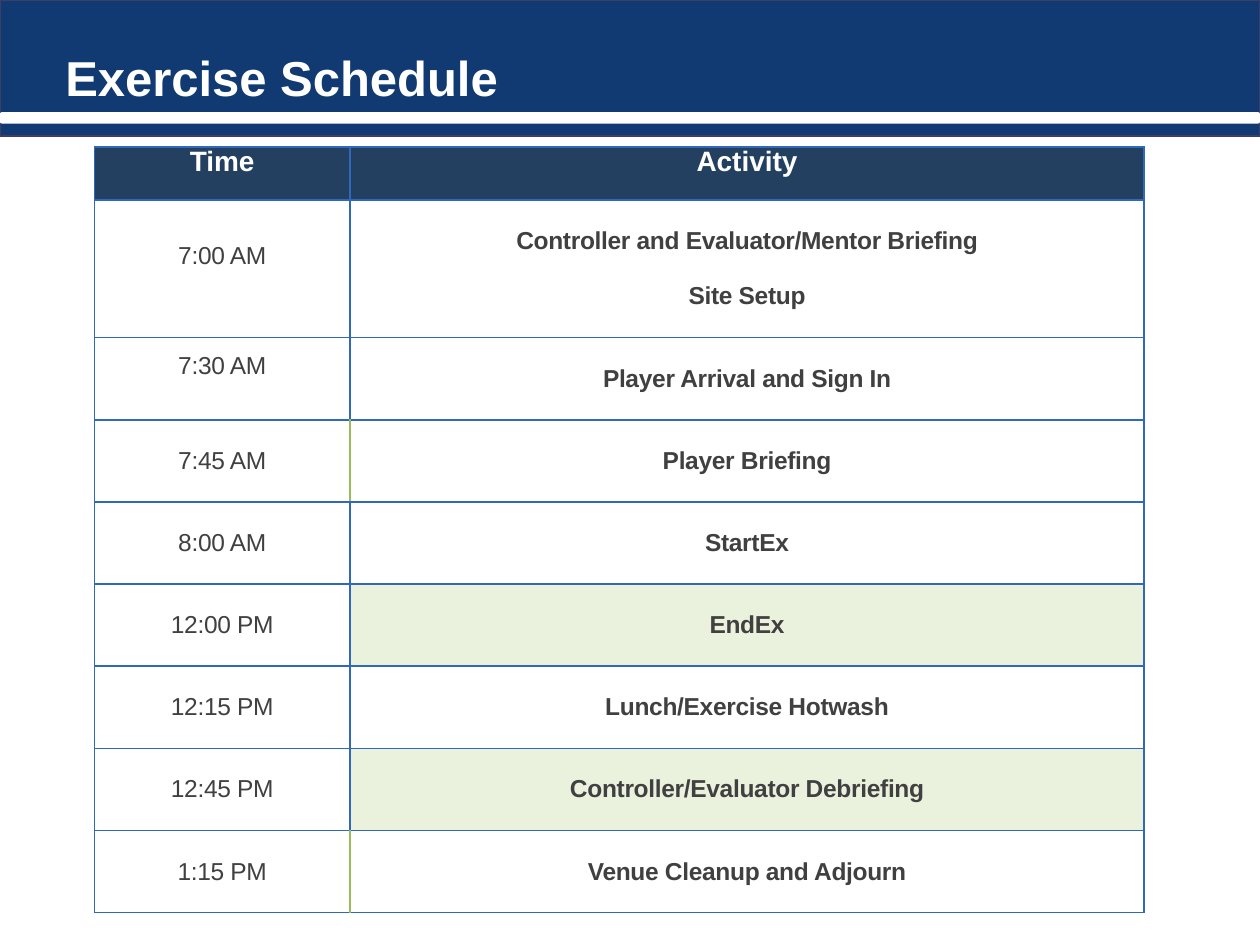
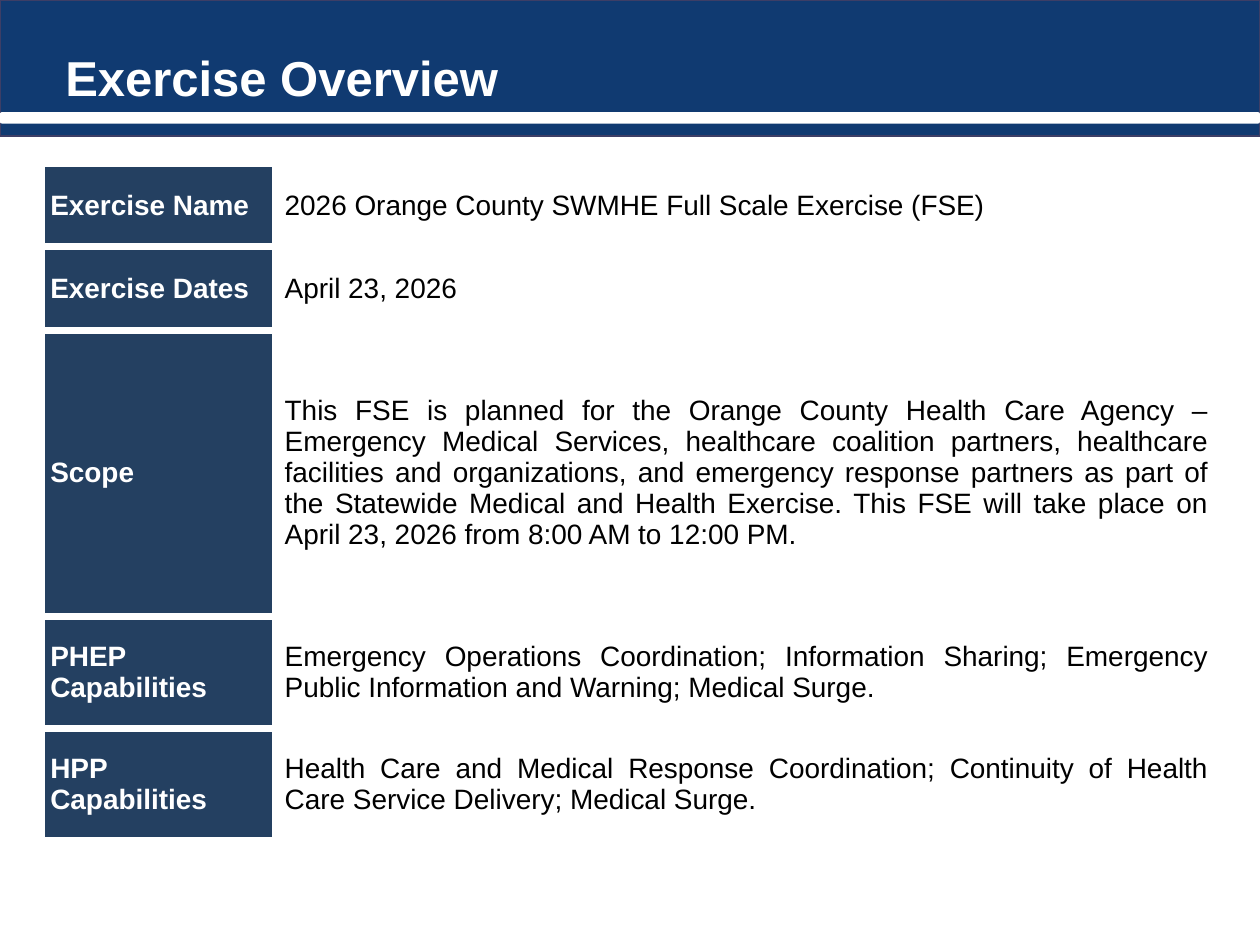
"""Build the exercise schedule and exercise overview slides."""
import pptx
import pptx.util
import pptx.dml.color
import pptx.enum.shapes
import pptx.enum.text
import pptx.oxml
import pptx.oxml.ns

HUES = {
    "band": "103A71", "edge": "3D3E66", "white": "FFFFFF", "head": "244061",
    "grid": "3068BB", "green": "9BBB59", "pale": "EAF1DD", "gray": "404040",
    "black": "000000",
}
FONT = "Arial"
COLS, ROWS = 100, 75
ALIGN = pptx.enum.text.PP_ALIGN
ANCHOR = pptx.enum.text.MSO_ANCHOR
SHAPE = pptx.enum.shapes.MSO_SHAPE

PLAN = [
    ("7:00 AM", ["Controller and Evaluator/Mentor Briefing", "Site Setup"]),
    ("7:30 AM", ["Player Arrival and Sign In"]),
    ("7:45 AM", ["Player Briefing"]),
    ("8:00 AM", ["StartEx"]),
    ("12:00 PM", ["EndEx"]),
    ("12:15 PM", ["Lunch/Exercise Hotwash"]),
    ("12:45 PM", ["Controller/Evaluator Debriefing"]),
    ("1:15 PM", ["Venue Cleanup and Adjourn"]),
]
RAISED = {"7:00 AM", "7:30 AM"}
SHADED = {"12:00 PM", "12:45 PM"}
GREEN = {"7:45 AM", "1:15 PM"}

FACTS = [
    ("Exercise Name", "2026 Orange County SWMHE Full Scale Exercise (FSE)"),
    ("Exercise Dates", "April 23, 2026"),
    ("Scope", "This FSE is planned for the Orange County Health Care Agency – "
     "Emergency Medical Services, healthcare coalition partners, healthcare "
     "facilities and organizations, and emergency response partners as part of "
     "the Statewide Medical and Health Exercise. This FSE will take place on "
     "April 23, 2026 from 8:00 AM to 12:00 PM."),
    ("PHEP Capabilities", "Emergency Operations Coordination; Information Sharing; "
     "Emergency Public Information and Warning; Medical Surge."),
    ("HPP Capabilities", "Health Care and Medical Response Coordination; "
     "Continuity of Health Care Service Delivery; Medical Surge."),
]


def hue(name):
    return pptx.dml.color.RGBColor.from_string(HUES[name])


class Deck:
    """Hold the style, the grid and the current slide."""

    def __init__(self):
        self.file = pptx.Presentation()
        self.file.slide_width = pptx.util.Inches(10)
        self.file.slide_height = pptx.util.Inches(7.5)
        self.slide = None

    def across(self, cols):
        return round(self.file.slide_width * cols / COLS)

    def down(self, rows):
        return round(self.file.slide_height * rows / ROWS)

    def place(self, left, top, width, height):
        return (self.across(left), self.down(top),
                self.across(width), self.down(height))

    def page(self, title):
        self.slide = self.file.slides.add_slide(self.file.slide_layouts[6])
        self.block(SHAPE.RECTANGLE, (0, 0, COLS, 10.8), "band", "edge")
        bar = self.block(SHAPE.ROUNDED_RECTANGLE, (0, 8.9, COLS, 0.9), "white")
        bar.adjustments[0] = 0.17
        frame = self.slide.shapes.add_textbox(
            *self.place(4.2, 0, 93.3, 8.9)).text_frame
        frame.word_wrap = True
        frame.vertical_anchor = ANCHOR.BOTTOM
        self.label(frame, [title], 28, "white", True)

    def block(self, kind, spot, fill, edge=None):
        shape = self.slide.shapes.add_shape(kind, *self.place(*spot))
        shape.shadow.inherit = False
        shape.fill.solid()
        shape.fill.fore_color.rgb = hue(fill)
        if edge:
            shape.line.color.rgb = hue(edge)
            shape.line.width = pptx.util.Pt(1.5)
        else:
            shape.line.fill.background()
        return shape

    def label(self, frame, lines, size, tint, bold=False,
              align=ALIGN.LEFT, track=0, gap=0):
        for spot, line in enumerate(lines):
            para = frame.add_paragraph() if spot else frame.paragraphs[0]
            para.alignment = align
            if spot:
                para.space_before = pptx.util.Pt(gap)
            run = para.add_run()
            run.text = line
            run.font.name = FONT
            run.font.size = pptx.util.Pt(size)
            run.font.bold = bold
            run.font.color.rgb = hue(tint)
            if track:
                run._r.get_or_add_rPr().set("spc", str(round(track * 100)))

    def table(self, spot, widths, heights):
        left, top, width, height = self.place(*spot)
        table = self.slide.shapes.add_table(
            len(heights), len(widths), left, top, width, height).table
        table.first_row = table.horz_banding = False
        for col, part in zip(table.columns, widths):
            col.width = round(width * part / sum(widths))
        for row, part in zip(table.rows, heights):
            row.height = round(height * part / sum(heights))
        return table

    def cell(self, cell, lines, size, tint, edges, weight, fill=None,
             anchor=ANCHOR.MIDDLE, lift=0, **style):
        cell.margin_left = cell.margin_right = self.across(0.7)
        cell.margin_top = 0
        cell.margin_bottom = self.down(lift)
        cell.vertical_anchor = anchor
        self.border(cell, edges, weight)
        if fill:
            cell.fill.solid()
            cell.fill.fore_color.rgb = hue(fill)
        else:
            cell.fill.background()
        self.label(cell.text_frame, lines, size, tint, **style)

    def border(self, cell, edges, weight):
        props = cell._tc.get_or_add_tcPr()
        for side, name in zip("LRTB", edges):
            props.append(pptx.oxml.parse_xml(
                f'<a:ln{side} {pptx.oxml.ns.nsdecls("a")} w="{pptx.util.Pt(weight)}">'
                f'<a:solidFill><a:srgbClr val="{HUES[name]}"/></a:solidFill>'
                f'</a:ln{side}>'))


def plan(deck):
    deck.page("Exercise Schedule")
    table = deck.table((7.5, 11.65, 83.3, 60.8), [2.03, 6.31],
                       [0.42, 1.09] + [0.65] * (len(PLAN) - 1))
    plain = ["grid"] * 4
    for spot, word in enumerate(["Time", "Activity"]):
        deck.cell(table.cell(0, spot), [word], 16, "white", plain, 1, "head",
                  ANCHOR.TOP, bold=True, align=ALIGN.CENTER)
    for row, (time, tasks) in enumerate(PLAN, 1):
        inner = "green" if time in GREEN else "grid"
        deck.cell(table.cell(row, 0), [time], 14, "gray",
                  ["grid", inner, "grid", "grid"], 1,
                  lift=2 if time in RAISED else 0,
                  align=ALIGN.CENTER, track=-0.2)
        deck.cell(table.cell(row, 1), tasks, 14, "gray",
                  [inner, "grid", "grid", "grid"], 1,
                  "pale" if time in SHADED else None,
                  bold=True, align=ALIGN.CENTER, track=-0.2, gap=15.5)


def facts(deck):
    deck.page("Exercise Overview")
    table = deck.table((3.3, 13, 93.3, 53.7), [1.86, 7.47],
                       [0.66, 0.66, 2.27, 0.89, 0.89])
    edges = ["white"] * 4
    for row, (label, text) in enumerate(FACTS):
        deck.cell(table.cell(row, 0), [label], 16, "white", edges, 4.5, "head",
                  bold=True)
        deck.cell(table.cell(row, 1), [text], 16, "black", edges, 4.5,
                  align=ALIGN.JUSTIFY)


def main():
    deck = Deck()
    plan(deck)
    facts(deck)
    deck.file.save("out.pptx")


if __name__ == "__main__":
    main()
